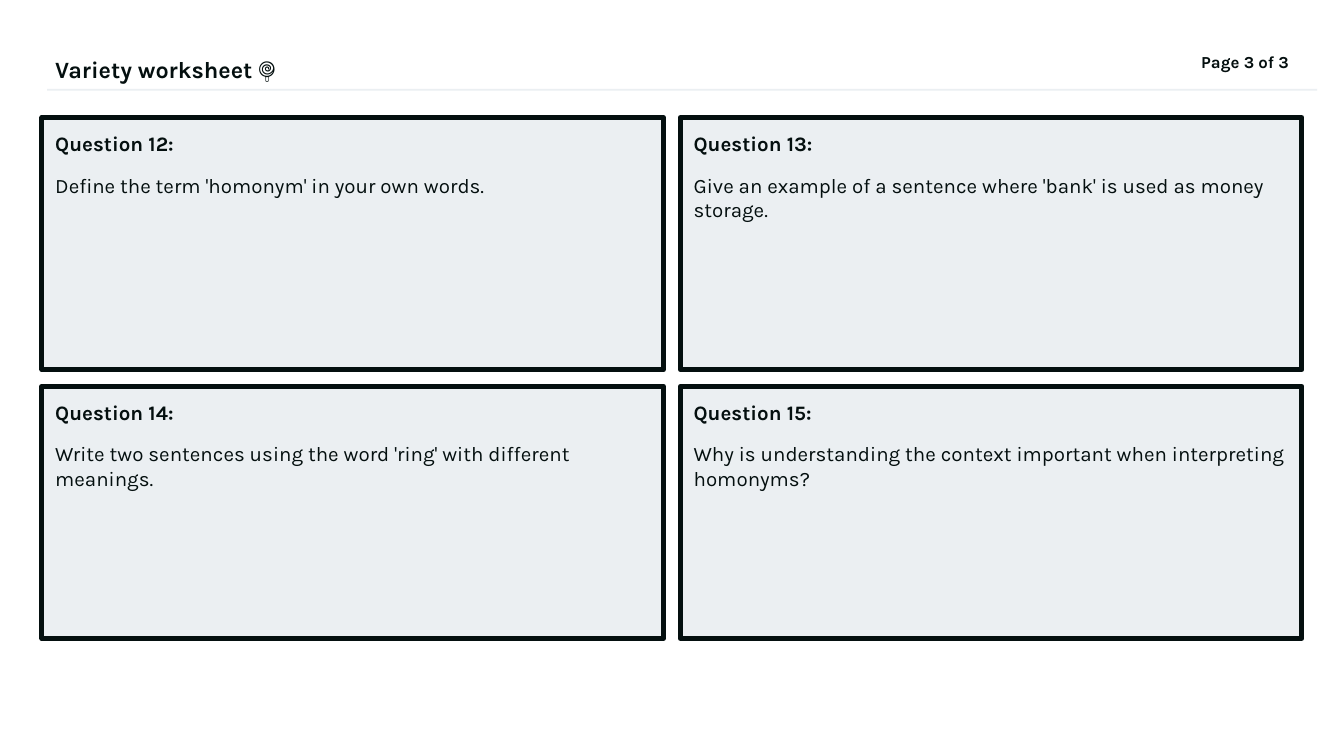
from pptx import Presentation
from pptx.dml.color import RGBColor
from pptx.enum.shapes import MSO_SHAPE
from pptx.enum.text import MSO_ANCHOR, PP_ALIGN
from pptx.util import Inches, Pt

INK = RGBColor(0x04, 0x0F, 0x0F)
MIST = RGBColor(0xEB, 0xEF, 0xF2)
FONT = "Karla"
COLUMNS, ROWS = 160, 90
UNIT = Inches(10) // COLUMNS
GAP = 2
QUESTIONS = [
    "Define the term 'homonym' in your own words.",
    "Give an example of a sentence where 'bank' is used as money storage.",
    "Write two sentences using the word 'ring' with different meanings.",
    "Why is understanding the context important when interpreting homonyms?",
]
FIRST_NUMBER = 12


def place(box):
    """Turn a box in grid columns and rows into slide lengths."""
    return [round(side * UNIT) for side in box]


def prepare_frame(frame):
    """Set wrapping, insets and top anchoring, and return the frame."""
    frame.word_wrap = True
    frame.vertical_anchor = MSO_ANCHOR.TOP
    frame.margin_left = frame.margin_right = Inches(0.1)
    frame.margin_top = frame.margin_bottom = Inches(0.1)
    return frame


def write(paragraph, words, size, bold=True, align=PP_ALIGN.LEFT):
    """Add one styled run to a paragraph."""
    paragraph.alignment = align
    run = paragraph.add_run()
    run.text = words
    run.font.name = FONT
    run.font.size = Pt(size)
    run.font.bold = bold
    run.font.color.rgb = INK


def add_panel(slide, box):
    """Add a flat pale rectangle without an outline."""
    panel = slide.shapes.add_shape(MSO_SHAPE.RECTANGLE, *place(box))
    panel.shadow.inherit = False
    panel.fill.solid()
    panel.fill.fore_color.rgb = MIST
    panel.line.fill.background()
    return panel


def add_header(slide, box):
    """Add the rule, worksheet title and page number."""
    left, top, width, height = box
    page_width = 20
    add_panel(slide, (left + 0.6, top + 5.6, width + 1.2, 0.2))
    labels = [
        ("Variety worksheet 🍭", left, 100, 12.5, PP_ALIGN.LEFT),
        ("Page 3 of 3", left + width - page_width, page_width, 9, PP_ALIGN.RIGHT),
    ]
    for words, label_left, label_width, size, align in labels:
        label = slide.shapes.add_textbox(*place((label_left, top, label_width, height)))
        frame = prepare_frame(label.text_frame)
        write(frame.paragraphs[0], words, size, align=align)


def add_question(slide, box, number, question):
    """Add one outlined answer box with its question."""
    panel = add_panel(slide, box)
    panel.line.color.rgb = INK
    panel.line.width = Pt(2.7)
    frame = prepare_frame(panel.text_frame)
    write(frame.paragraphs[0], f"Question {number}:", 11)
    prompt = frame.add_paragraph()
    prompt.space_before = Pt(9)
    write(prompt, question, 11, bold=False)


def add_question_grid(slide, box):
    """Lay the questions out in two columns and two rows."""
    left, top, width, height = box
    cell_width, cell_height = (width - GAP) / 2, (height - GAP) / 2
    for index, question in enumerate(QUESTIONS):
        row, column = divmod(index, 2)
        cell = (
            left + column * (cell_width + GAP),
            top + row * (cell_height + GAP),
            cell_width,
            cell_height,
        )
        add_question(slide, cell, FIRST_NUMBER + index, question)


def main():
    """Build and save the worksheet page."""
    deck = Presentation()
    deck.slide_width = COLUMNS * UNIT
    deck.slide_height = ROWS * UNIT
    slide = deck.slides.add_slide(deck.slide_layouts[6])
    add_header(slide, (5, 5, 150, 20))
    add_question_grid(slide, (5, 14, 150, 62))
    deck.save("out.pptx")


if __name__ == "__main__":
    main()
